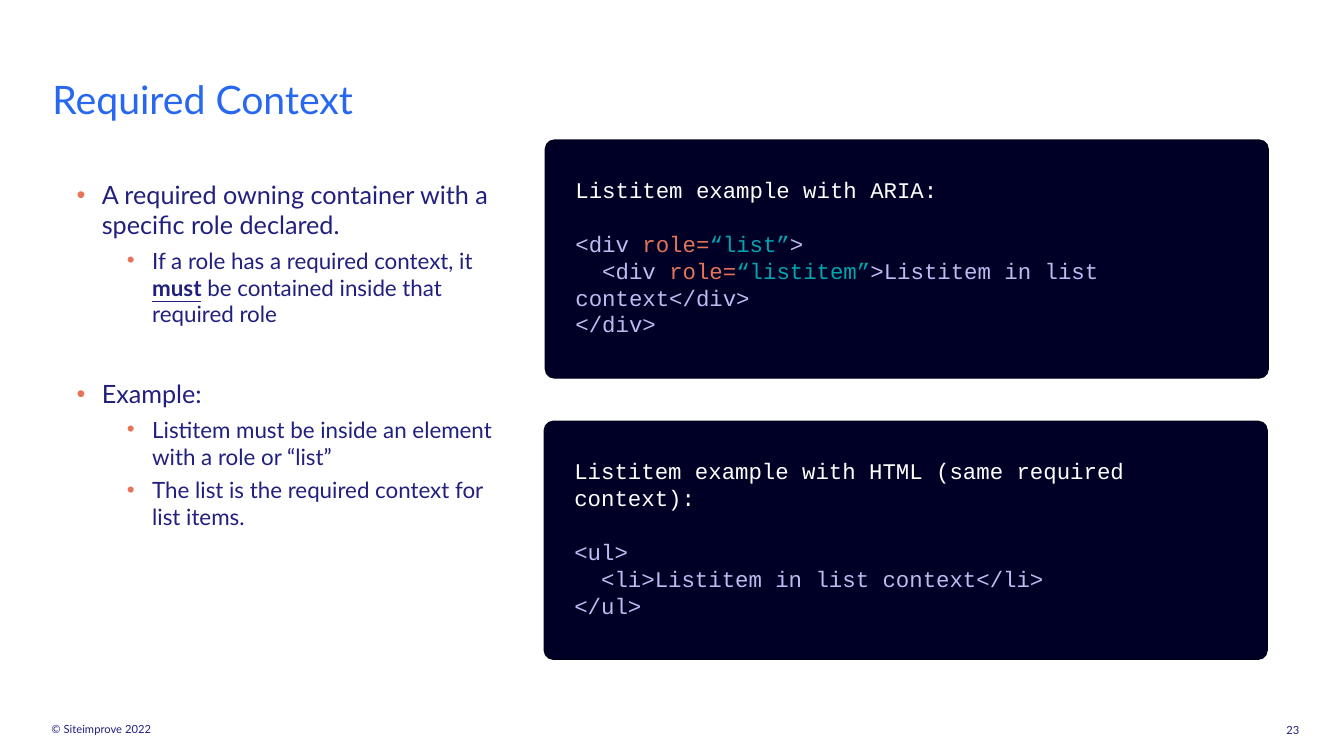
from dataclasses import dataclass

from lxml.etree import SubElement
from pptx import Presentation
from pptx.dml.color import RGBColor
from pptx.enum.shapes import MSO_SHAPE as Shape
from pptx.enum.text import MSO_ANCHOR as Anchor, MSO_AUTO_SIZE as AutoSize, PP_ALIGN as Align
from pptx.oxml.ns import qn
from pptx.util import Inches, Pt

SLIDE_WIDTH, SLIDE_HEIGHT = Inches(13.333), Inches(7.5)
SANS, MONO = "Lato", "Courier New"
NAVY, BLUE, CORAL, TEAL = "21207F", "2767F1", "E57459", "00A5AE"
WHITE, LILAC, CARD_FILL, CARD_LINE = "FFFFFF", "BDBBF1", "000026", "00001C"
CODE_SIZE, CODE_LEADING = 16, 19.2


@dataclass(frozen=True)
class Area:
    """A rectangle in percent of the slide's width and height."""
    left: float
    top: float
    width: float
    height: float

    def lengths(self) -> tuple:
        return (int(SLIDE_WIDTH * self.left / 100), int(SLIDE_HEIGHT * self.top / 100),
                int(SLIDE_WIDTH * self.width / 100), int(SLIDE_HEIGHT * self.height / 100))


@dataclass(frozen=True)
class Run:
    text: str
    color: str = NAVY
    strong: bool = False


@dataclass(frozen=True)
class Bullet:
    runs: list
    level: int = 0
    space_before: float = 5


@dataclass(frozen=True)
class CodeCard:
    left: float
    top: float
    heading: str
    lines: list


BULLETS = [
    Bullet([Run("A required owning container with a specific role declared.")], space_before=0),
    Bullet([Run("If a role has a required context, it "), Run("must", strong=True),
            Run(" be contained inside that required role")], level=1),
    Bullet([Run("Example:")], space_before=36.5),
    Bullet([Run("Listitem must be inside an element with a role or “list”")], level=1),
    Bullet([Run("The list is the required context for list items.")], level=1),
]


def role_line(opening: str, role: str, ending: str) -> list:
    return [Run(opening, LILAC), Run("role=", CORAL), Run(role, TEAL), Run(ending, LILAC)]


CARDS = [
    CodeCard(40.58, 18.53, "Listitem example with ARIA:", [
        role_line("<div ", "“list”", ">"),
        role_line("  <div ", "“listitem”", ">Listitem in list context</div>"),
        [Run("</div>", LILAC)],
    ]),
    CodeCard(40.5, 55.73, "Listitem example with HTML (same required context):", [
        [Run("<ul>", LILAC)],
        [Run("  <li>Listitem in list context</li>", LILAC)],
        [Run("</ul>", LILAC)],
    ]),
]


def rgb(color: str) -> RGBColor:
    return RGBColor.from_string(color)


def set_frame(frame, *, inset: tuple = (0, 0), anchor=Anchor.TOP) -> None:
    frame.word_wrap = True
    frame.auto_size = AutoSize.NONE
    frame.margin_left = frame.margin_right = Inches(inset[0])
    frame.margin_top = frame.margin_bottom = Inches(inset[1])
    frame.vertical_anchor = anchor


def add_frame(slide, area: Area, **frame_format):
    frame = slide.shapes.add_textbox(*area.lengths()).text_frame
    set_frame(frame, **frame_format)
    return frame


def next_paragraph(frame):
    """Return the unused first paragraph, or a new one."""
    first = frame.paragraphs[0]
    return frame.add_paragraph() if first.runs else first


def write(paragraph, runs: list, *, size: float, font: str = SANS, align=Align.LEFT,
          line_spacing=None, space_before: float = 0) -> None:
    paragraph.alignment = align
    paragraph.space_before = Pt(space_before)
    if line_spacing is not None:
        paragraph.line_spacing = line_spacing
    for item in runs:
        run = paragraph.add_run()
        run.text = item.text
        run.font.name = font
        run.font.size = Pt(size)
        run.font.color.rgb = rgb(item.color)
        if item.strong:
            run.font.bold = run.font.underline = True


def add_bullet_mark(paragraph, level: int) -> None:
    paragraph.level = level
    properties = paragraph._p.get_or_add_pPr()
    properties.set("marL", str(Inches(0.25 + 0.5 * level)))
    properties.set("indent", str(-Inches(0.25)))
    SubElement(SubElement(properties, qn("a:buClr")), qn("a:srgbClr"), val=CORAL)
    SubElement(properties, qn("a:buFont"), typeface="Arial")
    SubElement(properties, qn("a:buChar"), char="•")


def add_title(slide) -> None:
    title = slide.shapes.title
    title.left, title.top, title.width, title.height = Area(3.9, 10.67, 53.78, 5.73).lengths()
    set_frame(title.text_frame)
    write(title.text_frame.paragraphs[0], [Run("Required Context", BLUE)], size=28, line_spacing=0.9)


def add_bullets(slide) -> None:
    frame = add_frame(slide, Area(5.7, 23.73, 31.28, 57.73))
    for bullet in BULLETS:
        paragraph = next_paragraph(frame)
        add_bullet_mark(paragraph, bullet.level)
        write(paragraph, bullet.runs, size=18 - 2 * bullet.level, space_before=bullet.space_before)


def add_code_card(slide, card: CodeCard) -> None:
    area = Area(card.left, card.top, 53.78, 31.47)
    panel = slide.shapes.add_shape(Shape.ROUNDED_RECTANGLE, *area.lengths())
    panel.adjustments[0] = 0.038
    panel.shadow.inherit = False
    panel.fill.solid()
    panel.fill.fore_color.rgb = rgb(CARD_FILL)
    panel.line.color.rgb = rgb(CARD_LINE)
    panel.line.width = Pt(1)

    frame = add_frame(slide, Area(card.left + 1.5, card.top + 4.13, 50.18, 21.6), inset=(0.1, 0.05))
    for index, runs in enumerate([[Run(card.heading, WHITE)], *card.lines]):
        write(next_paragraph(frame), runs, size=CODE_SIZE, font=MONO, line_spacing=Pt(CODE_LEADING),
              space_before=CODE_LEADING if index == 1 else 0)


def add_small_print(slide, area: Area, text: str, align) -> None:
    frame = add_frame(slide, area, anchor=Anchor.MIDDLE)
    write(frame.paragraphs[0], [Run(text)], size=8, align=align)


def main() -> None:
    presentation = Presentation()
    presentation.slide_width, presentation.slide_height = SLIDE_WIDTH, SLIDE_HEIGHT
    slide = presentation.slides.add_slide(presentation.slide_layouts[5])
    add_title(slide)
    add_bullets(slide)
    for card in CARDS:
        add_code_card(slide, card)
    add_small_print(slide, Area(3.83, 94.67, 27.23, 3.6), "© Siteimprove 2022", Align.LEFT)
    add_small_print(slide, Area(94.28, 92.93, 3.83, 7.2), "23", Align.CENTER)
    presentation.save("out.pptx")


if __name__ == "__main__":
    main()
